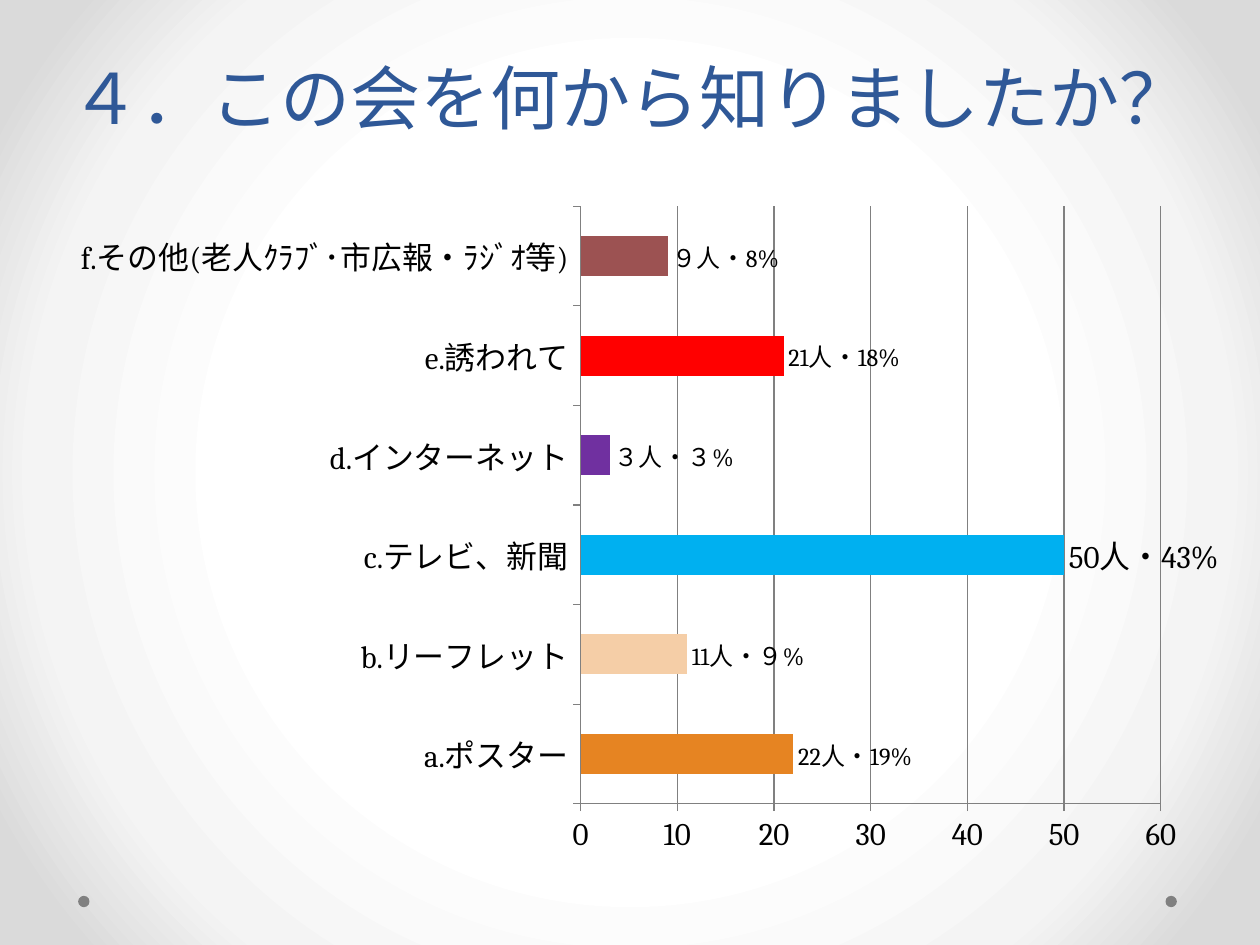
import pptx
import pptx.chart.data
import pptx.dml.color
import pptx.enum.chart
import pptx.enum.shapes
import pptx.enum.text
import pptx.oxml
import pptx.oxml.ns
import pptx.util
from pptx.util import Inches

RGBColor = pptx.dml.color.RGBColor
TITLE_BLUE = RGBColor(0x2F, 0x58, 0x97)
BLACK = RGBColor(0, 0, 0)
GRAY = RGBColor(0x80, 0x80, 0x80)
ORANGE = RGBColor(0xE6, 0x84, 0x22)
PEACH = RGBColor(0xF5, 0xCE, 0xA7)
SKY = RGBColor(0x00, 0xB0, 0xF0)
PURPLE = RGBColor(0x70, 0x30, 0xA0)
RED = RGBColor(0xFF, 0, 0)
BROWN = RGBColor(0x9C, 0x52, 0x52)

# Category, people, label, label size, bar colour
ANSWERS = [
    ("a.ポスター", 22, "22人・19%", 14, ORANGE),
    ("b.リーフレット", 11, "11人・９%", 14, PEACH),
    ("c.テレビ、新聞", 50, "50人・43%", 18, SKY),
    ("d.インターネット", 3, "３人・３%", 14, PURPLE),
    ("e.誘われて", 21, "21人・18%", 14, RED),
    ("f.その他(老人ｸﾗﾌﾞ･市広報・ﾗｼﾞｵ等)", 9, "９人・8%", 14, BROWN),
]


class SurveySlide:
    font_name = "Cambria"

    def __init__(self, presentation):
        self.slide = presentation.slides.add_slide(presentation.slide_layouts[6])

    def style(self, font, size, color):
        font.name = self.font_name
        font.size = pptx.util.Pt(size)
        font.color.rgb = color

    def radial_background(self, stops):
        self.slide.background.fill.gradient()
        gradient = next(self.slide.element.iter(pptx.oxml.ns.qn("a:gradFill")))
        for child in list(gradient):
            gradient.remove(child)
        namespace = pptx.oxml.ns.nsdecls("a")
        stop_xml = "".join(
            f'<a:gs pos="{percent * 1000}"><a:srgbClr val="{color}"/></a:gs>'
            for percent, color in stops)
        gradient.append(pptx.oxml.parse_xml(f"<a:gsLst {namespace}>{stop_xml}</a:gsLst>"))
        gradient.append(pptx.oxml.parse_xml(
            f'<a:path {namespace} path="circle">'
            '<a:fillToRect l="50000" t="50000" r="50000" b="50000"/></a:path>'))

    def dot(self, left, top, size):
        dot = self.slide.shapes.add_shape(
            pptx.enum.shapes.MSO_SHAPE.OVAL,
            Inches(left), Inches(top), Inches(size), Inches(size))
        dot.shadow.inherit = False
        dot.fill.solid()
        dot.fill.fore_color.rgb = GRAY
        dot.line.fill.background()

    def title(self, text, left, top, width, height):
        box = self.slide.shapes.add_textbox(
            Inches(left), Inches(top), Inches(width), Inches(height))
        frame = box.text_frame
        frame.word_wrap = True
        frame.vertical_anchor = pptx.enum.text.MSO_ANCHOR.BOTTOM
        frame.text = text
        heading = frame.paragraphs[0]
        heading.alignment = pptx.enum.text.PP_ALIGN.CENTER
        heading.line_spacing = pptx.util.Pt(58)
        self.style(heading.runs[0].font, 40, TITLE_BLUE)

    def bar_chart(self, answers, left, top, width, height, plot):
        data = pptx.chart.data.CategoryChartData()
        data.categories = [answer[0] for answer in answers]
        data.add_series("Series 1", [answer[1] for answer in answers])
        chart = self.slide.shapes.add_chart(
            pptx.enum.chart.XL_CHART_TYPE.BAR_CLUSTERED,
            Inches(left), Inches(top), Inches(width), Inches(height), data).chart
        chart.has_legend = False
        chart.has_title = False
        self.style(chart.font, 18, BLACK)

        # Axes
        people = chart.value_axis
        people.minimum_scale, people.maximum_scale, people.major_unit = 0, 60, 10
        people.has_major_gridlines = True
        for line in (people.format.line, people.major_gridlines.format.line,
                     chart.category_axis.format.line):
            line.color.rgb = GRAY
            line.width = pptx.util.Pt(0.75)
        for axis in (people, chart.category_axis):
            axis.major_tick_mark = pptx.enum.chart.XL_TICK_MARK.OUTSIDE

        # Bars and their labels
        bars = chart.plots[0]
        bars.gap_width = 150
        bars.vary_by_categories = False
        series = bars.series[0]
        series.format.fill.solid()
        series.format.fill.fore_color.rgb = BROWN
        for index, (_, _, label, size, color) in enumerate(answers):
            point = series.points[index]
            point.format.fill.solid()
            point.format.fill.fore_color.rgb = color
            caption = point.data_label.text_frame
            caption.text = label
            self.style(caption.paragraphs[0].runs[0].font, size, BLACK)
            point.data_label.position = pptx.enum.chart.XL_LABEL_POSITION.OUTSIDE_END
        self.place_plot(chart, plot)

    def place_plot(self, chart, plot):
        area = next(chart.element.iter(pptx.oxml.ns.qn("c:plotArea")))
        for layout in area.findall(pptx.oxml.ns.qn("c:layout")):
            area.remove(layout)
        sizes = "".join(f'<c:{key} val="{value}"/>' for key, value in zip("xywh", plot))
        area.insert(0, pptx.oxml.parse_xml(
            f'<c:layout {pptx.oxml.ns.nsdecls("c")}><c:manualLayout>'
            '<c:layoutTarget val="inner"/><c:xMode val="edge"/><c:yMode val="edge"/>'
            f"{sizes}</c:manualLayout></c:layout>"))


def main():
    presentation = pptx.Presentation()
    presentation.slide_width = Inches(10)
    presentation.slide_height = Inches(7.5)
    survey = SurveySlide(presentation)

    # Backdrop
    survey.radial_background([(50, "FFFFFF"), (76, "F4F4F4"), (92, "DADADA")])
    for left in (9.25, 0.62):
        survey.dot(left, 7.11, 0.09)

    # Question and answers
    survey.title("４．この会を何から知りましたか？", 0, 0, 10, 1.15)
    survey.bar_chart(ANSWERS, 0.28, 1.47, 9.39, 5.58, plot=(0.47, 0.03, 0.5, 0.85))

    presentation.save("out.pptx")


if __name__ == "__main__":
    main()
